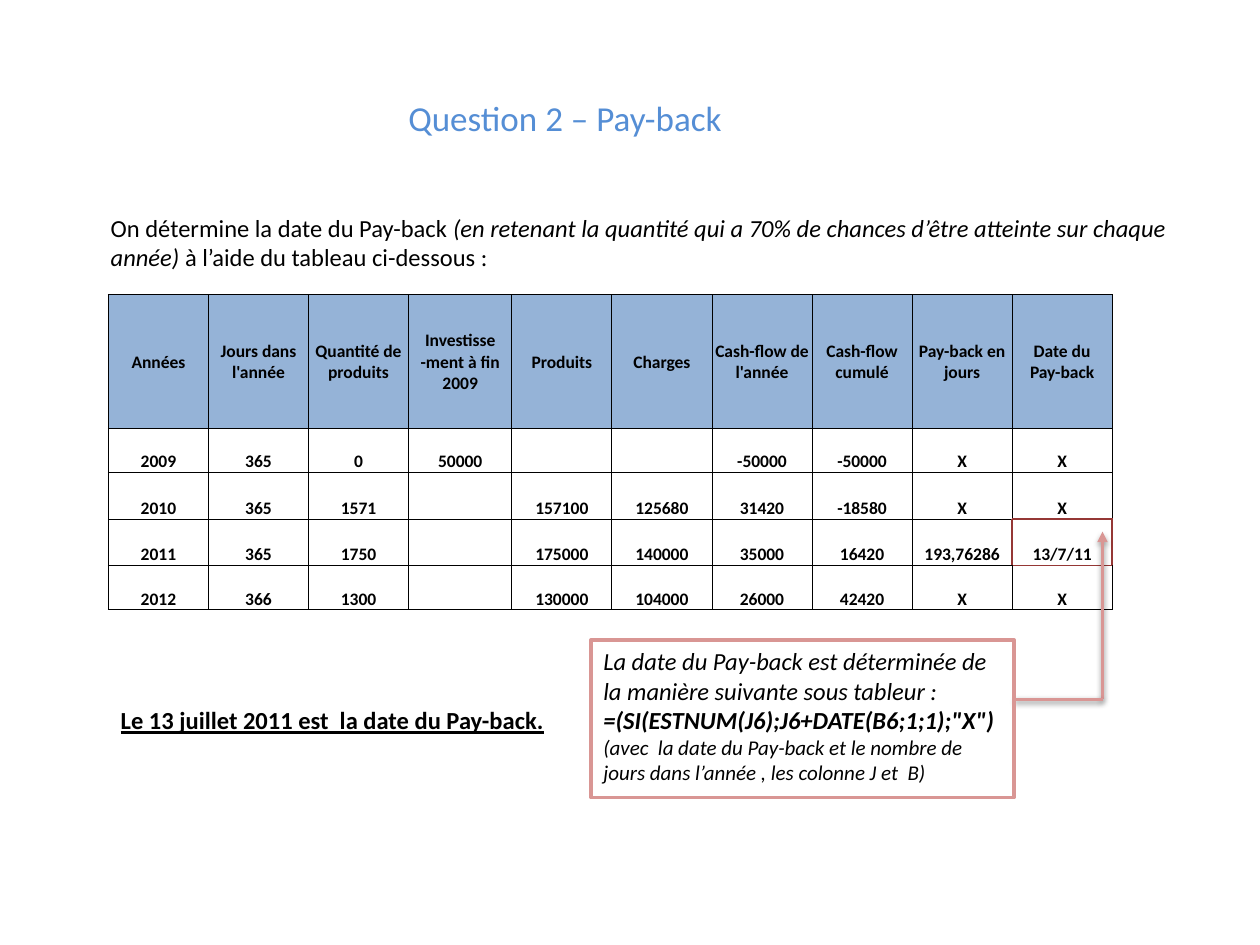
from dataclasses import dataclass

from lxml.etree import SubElement
from pptx import Presentation
from pptx.dml.color import RGBColor
from pptx.enum.shapes import MSO_CONNECTOR, MSO_SHAPE
from pptx.enum.text import MSO_ANCHOR, PP_ALIGN
from pptx.oxml import parse_xml
from pptx.oxml.ns import nsdecls, qn
from pptx.util import Inches, Pt


@dataclass(frozen=True)
class Theme:
    font: str = "Calibri"
    ink: str = "000000"
    paper: str = "FFFFFF"
    title: str = "558ED5"
    head: str = "95B3D7"
    mark: str = "953735"
    frame: str = "D99694"
    big: int = 20
    body: int = 14
    note: int = 12
    small: int = 10


THEME = Theme()
HEADS = ["Années", "Jours dans l'année", "Quantité de produits",
         "Investisse\n-ment à fin 2009", "Produits", "Charges",
         "Cash-flow de l'année", "Cash-flow cumulé", "Pay-back en jours",
         "Date du\nPay-back"]
ROWS = [
    HEADS,
    ["2009", "365", "0", "50000", "", "", "-50000", "-50000", "X", "X"],
    ["2010", "365", "1571", "", "157100", "125680", "31420", "-18580", "X", "X"],
    ["2011", "365", "1750", "", "175000", "140000", "35000", "16420",
     "193,76286", "13/7/11"],
    ["2012", "366", "1300", "", "130000", "104000", "26000", "42420", "X", "X"],
]
HEIGHTS = [1.06, 0.35, 0.37, 0.37, 0.35]
WIDE_COL, WIDE = 3, 0.82
PAYBACK = (3, 9)
SIDES = {"L": (0, -1), "R": (0, 1), "T": (-1, 0), "B": (1, 0)}


def rgb(code):
    return RGBColor.from_string(code)


def style(font, size, color=THEME.ink, bold=False, italic=False, line=False):
    font.name, font.size = THEME.font, Pt(size)
    font.bold, font.italic, font.underline = bold, italic, line
    font.color.rgb = rgb(color)


def add_run(para, text, size, **looks):
    run = para.add_run()
    run.text = text
    style(run.font, size, **looks)


def add_box(slide, box):
    frame = slide.shapes.add_textbox(*map(Inches, box)).text_frame
    frame.word_wrap = True
    return frame


def add_title(slide, box):
    frame = add_box(slide, box)
    frame.vertical_anchor = MSO_ANCHOR.MIDDLE
    para = frame.paragraphs[0]
    para.alignment = PP_ALIGN.CENTER
    add_run(para, "Question 2 – Pay-back", THEME.big, color=THEME.title)


def add_intro(slide, box):
    para = add_box(slide, box).paragraphs[0]
    add_run(para, "On détermine la date du Pay-back ", THEME.body)
    add_run(para, "(en retenant la quantité qui a 70% de chances d’être "
            "atteinte sur chaque année) ", THEME.body, italic=True)
    add_run(para, "à l’aide du tableau ci-dessous :", THEME.body)


def set_edges(cell, spot):
    """Rule the cell thinly in ink, and in the mark colour around PAYBACK."""
    props = cell._tc.get_or_add_tcPr()
    for side, (down, right) in SIDES.items():
        near = (spot[0] + down, spot[1] + right)
        marked = PAYBACK in (spot, near)
        edge = SubElement(props, qn(f"a:ln{side}"), w=str(Pt(1 if marked else 0.5)))
        fill = SubElement(edge, qn("a:solidFill"))
        SubElement(fill, qn("a:srgbClr"), val=THEME.mark if marked else THEME.ink)


def fill_cell(cell, text, spot):
    head = spot[0] == 0
    set_edges(cell, spot)
    cell.fill.solid()
    cell.fill.fore_color.rgb = rgb(THEME.head if head else THEME.paper)
    cell.margin_left = cell.margin_right = cell.margin_top = Inches(0.01)
    cell.margin_bottom = 0
    cell.vertical_anchor = MSO_ANCHOR.MIDDLE if head else MSO_ANCHOR.BOTTOM
    cell.text_frame.text = text
    for para in cell.text_frame.paragraphs:
        para.alignment = PP_ALIGN.CENTER
        style(para.font, THEME.small, bold=True)
        for run in para.runs:
            style(run.font, THEME.small, bold=True)


def add_grid(slide, box):
    count = len(HEADS)
    table = slide.shapes.add_table(len(ROWS), count, *map(Inches, box)).table
    table.first_row = table.horz_banding = False
    width = (box[2] - WIDE) / (count - 1)
    for col, column in enumerate(table.columns):
        column.width = Inches(WIDE if col == WIDE_COL else width)
    for row, (height, texts) in enumerate(zip(HEIGHTS, ROWS)):
        table.rows[row].height = Inches(height)
        for col, text in enumerate(texts):
            fill_cell(table.cell(row, col), text, (row, col))


def add_callout(slide, box):
    shape = slide.shapes.add_shape(MSO_SHAPE.RECTANGLE, *map(Inches, box))
    shape.shadow.inherit = False
    shape.fill.background()
    shape.line.color.rgb = rgb(THEME.frame)
    shape.line.width = Pt(2)
    frame = shape.text_frame
    frame.word_wrap = True
    frame.vertical_anchor = MSO_ANCHOR.TOP
    lead, rule = frame.paragraphs[0], frame.add_paragraph()
    lead.alignment = rule.alignment = PP_ALIGN.LEFT
    add_run(lead, "La date du Pay-back est déterminée de la manière suivante "
            "sous tableur :", THEME.body, italic=True)
    add_run(rule, '=(SI(ESTNUM(J6);J6+DATE(B6;1;1);"X")', THEME.body,
            bold=True, italic=True)
    add_run(rule, "(avec  la date du Pay-back et le nombre de jours dans "
            "l’année , les colonne J et  B)", THEME.note, italic=True)


def add_line(slide, start, end, arrow=False):
    line = slide.shapes.add_connector(
        MSO_CONNECTOR.STRAIGHT, *map(Inches, start + end))
    line.line.color.rgb = rgb(THEME.frame)
    line.line.width = Pt(2)
    if arrow:
        SubElement(line.line._get_or_add_ln(), qn("a:tailEnd"), type="triangle")
    line._element.spPr.append(parse_xml(
        f'<a:effectLst {nsdecls("a")}><a:outerShdw blurRad="{Pt(3.1)}" '
        f'dist="{Pt(1.6)}" dir="5400000" rotWithShape="0">'
        f'<a:srgbClr val="{THEME.ink}"><a:alpha val="38000"/></a:srgbClr>'
        '</a:outerShdw></a:effectLst>'))


def add_link(slide, box):
    """Lead from the box's lower left corner along its base, then up."""
    left, top, width, height = box
    corner = (left + width, top + height)
    add_line(slide, corner, (left + width, top), arrow=True)
    add_line(slide, corner, (left, top + height))


def add_answer(slide, box):
    add_run(add_box(slide, box).paragraphs[0],
            "Le 13 juillet 2011 est  la date du Pay-back.", THEME.body,
            bold=True, line=True)


def main():
    deck = Presentation()
    deck.slide_width, deck.slide_height = Inches(10), Inches(7.5)
    slide = deck.slides.add_slide(deck.slide_layouts[6])
    add_title(slide, (3.12, 0.7, 2.73, 0.47))
    add_grid(slide, (0.86, 2.34, 7.97, 2.5))
    add_intro(slide, (0.78, 1.64, 8.59, 0.57))
    add_link(slide, (8.05, 4.22, 0.7, 1.33))
    add_callout(slide, (4.69, 5.08, 3.36, 1.25))
    add_answer(slide, (0.86, 5.55, 3.59, 0.34))
    deck.save("out.pptx")


if __name__ == "__main__":
    main()
